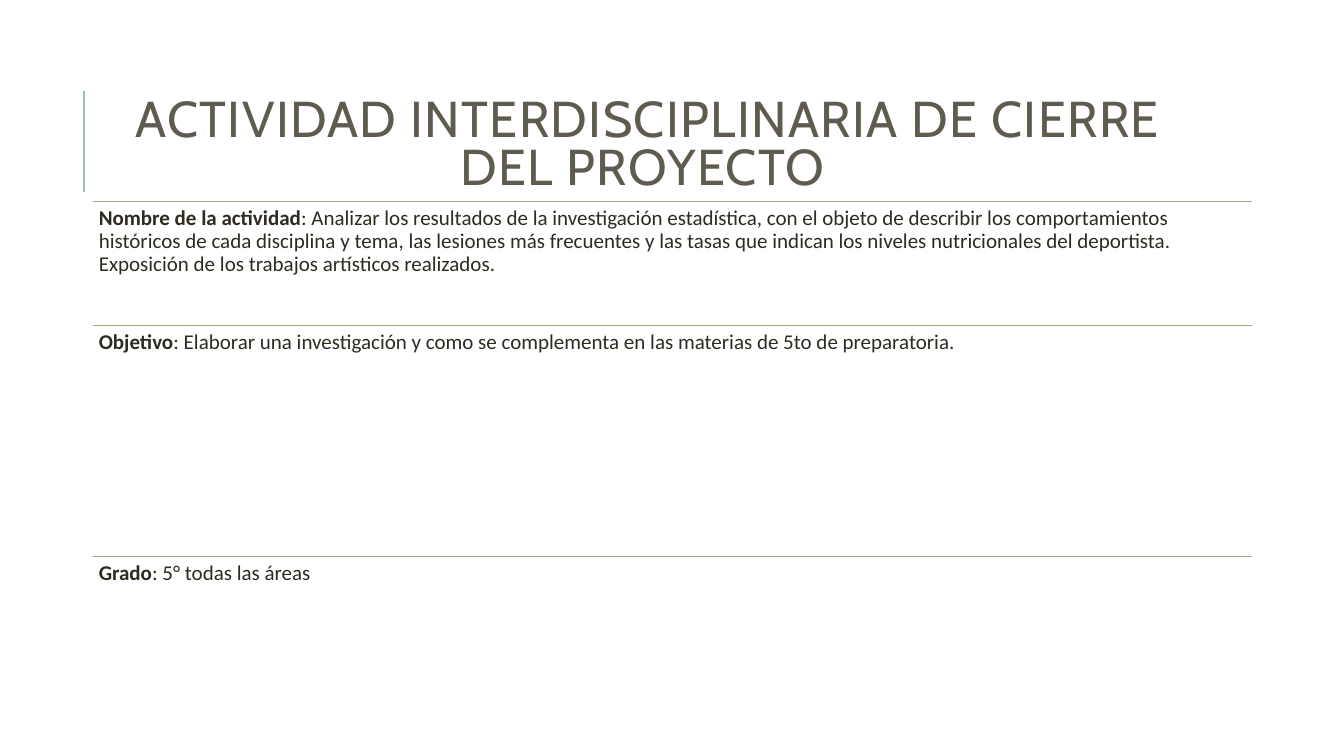
from lxml import etree
from pptx import Presentation
from pptx.dml.color import RGBColor
from pptx.enum.shapes import MSO_CONNECTOR
from pptx.enum.text import MSO_ANCHOR, MSO_AUTO_SIZE, PP_ALIGN
from pptx.oxml.ns import qn
from pptx.util import Inches, Pt

STRAIGHT = MSO_CONNECTOR.STRAIGHT
MIDDLE, TOP = MSO_ANCHOR.MIDDLE, MSO_ANCHOR.TOP
NO_AUTOFIT = MSO_AUTO_SIZE.NONE
CENTER = PP_ALIGN.CENTER

TITLE_ONLY = 5
TITLE_COLOR, BODY_COLOR = "605B4F", "2E2B21"
ACCENT_COLOR, RULE_COLOR = "9CBEBD", "A9A57C"
BODY_SIZE = 15
INSET = 0.06

TITLE = "ACTIVIDAD INTERDISCIPLINARIA DE CIERRE DEL PROYECTO "
# Label, text and height in inches of each section
SECTIONS = [
    ("Nombre de la actividad",
     ": Analizar los resultados de la investigación estadística, con el objeto de "
     "describir los comportamientos históricos de cada disciplina y tema, las lesiones "
     "más frecuentes y las tasas que indican los niveles nutricionales del deportista. "
     "Exposición de los trabajos artísticos realizados.", 1.23),
    ("Objetivo",
     ": Elaborar una investigación y como se complementa en las materias de 5to de "
     "preparatoria.", 2.29),
    ("Grado", ": 5° todas las áreas", 1.24),
]


def rgb(color):
    return RGBColor.from_string(color)


def style_font(font, name, size, color):
    font.name = name
    font.size = Pt(size)
    font.color.rgb = rgb(color)


def add_rule(slide, x1, y1, x2, y2, color, width):
    rule = slide.shapes.add_connector(
        STRAIGHT, Inches(x1), Inches(y1), Inches(x2), Inches(y2))
    rule.line.color.rgb = rgb(color)
    rule.line.width = Pt(width)
    etree.SubElement(rule._element.spPr, qn("a:effectLst"))


def add_title(slide, left, top, width, height):
    title = slide.shapes.title
    title.left, title.top = Inches(left), Inches(top)
    title.width, title.height = Inches(width), Inches(height)
    frame = title.text_frame
    frame.text = TITLE
    frame.word_wrap = True
    frame.auto_size = NO_AUTOFIT
    frame.vertical_anchor = MIDDLE
    heading = frame.paragraphs[0]
    heading.alignment = CENTER
    heading.line_spacing = 0.8
    style_font(heading.font, "Cabin", 36, TITLE_COLOR)
    heading.runs[0].font._element.set("spc", "100")


def add_section(slide, left, top, width, height, label, text):
    """Draw a rule along the top of the box and the labelled text below it."""
    add_rule(slide, left, top, left + width, top, RULE_COLOR, 1.25)
    box = slide.shapes.add_textbox(
        Inches(left), Inches(top), Inches(width), Inches(height))
    frame = box.text_frame
    frame.word_wrap = True
    frame.vertical_anchor = TOP
    frame.margin_left = frame.margin_right = Inches(INSET)
    frame.margin_top = frame.margin_bottom = Inches(INSET)
    paragraph = frame.paragraphs[0]
    paragraph.line_spacing = 0.9
    paragraph.space_after = Pt(0.35 * BODY_SIZE)
    style_font(paragraph.font, "Calibri", BODY_SIZE, BODY_COLOR)
    label_run = paragraph.add_run()
    label_run.text = label
    label_run.font.bold = True
    paragraph.add_run().text = text


def add_sections(slide, left, top, width):
    for label, text, height in SECTIONS:
        add_section(slide, left, top, width, height, label, text)
        top += height


def main():
    presentation = Presentation()
    presentation.slide_width = Inches(13.33)
    presentation.slide_height = Inches(7.5)
    slide = presentation.slides.add_slide(presentation.slide_layouts[TITLE_ONLY])
    add_rule(slide, 0.83, 1.9, 0.83, 0.9, ACCENT_COLOR, 1.5)
    add_title(slide, 1.12, 0.64, 10.63, 1.64)
    add_sections(slide, 0.92, 2, 11.5)
    presentation.save("out.pptx")


if __name__ == "__main__":
    main()
